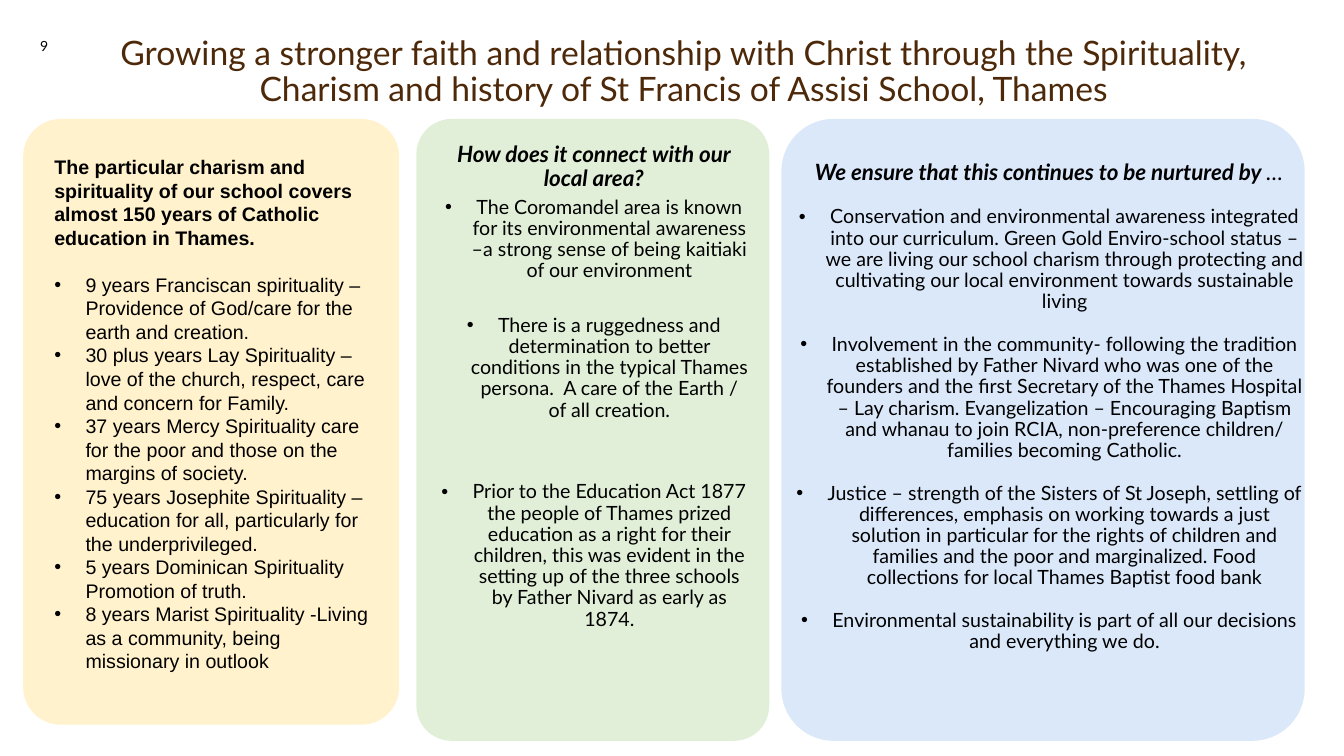
from lxml.etree import SubElement
from pptx import Presentation
from pptx.dml.color import RGBColor
from pptx.enum.shapes import MSO_SHAPE
from pptx.enum.text import MSO_ANCHOR, PP_ALIGN
from pptx.oxml.ns import qn
from pptx.util import Inches, Pt

COLORS = {
    "ink": "000000",
    "title": "4D290A",
    "charism": "FFF2CC",
    "local": "E1EFD8",
    "nurture": "DAE8FA",
}
CARD_TOP = 1.18
HEADING = {"bold": True, "italic": True, "size": Pt(16)}

CHARISM = [
    "9 years Franciscan spirituality – Providence of God/care for the earth and creation.",
    "30 plus years Lay Spirituality – love of the church, respect, care and concern for Family.",
    "37 years Mercy Spirituality care for the poor and those on the margins of society.",
    "75 years Josephite Spirituality –education for all, particularly for the underprivileged.",
    "5 years Dominican Spirituality Promotion of truth.",
    "8 years Marist Spirituality -Living as a community, being missionary in outlook",
]
LOCAL = [
    (4.2, "The Coromandel area is known for its environmental awareness –a strong sense of "
          "being kaitiaki of our environment"),
    (23.8, "There is a ruggedness and determination to better conditions in the typical Thames "
           "persona.  A care of the Earth / of all creation."),
    (43.4, "Prior to the Education Act 1877 the people of Thames prized education as a right for "
           "their children, this was evident in the setting up of the three schools by Father "
           "Nivard as early as 1874."),
]
NURTURE = [
    "Conservation and environmental awareness integrated into our curriculum. Green Gold "
    "Enviro-school status – we are living our school charism through protecting and cultivating "
    "our local environment towards sustainable living",
    "Involvement in the community- following the tradition established by Father Nivard who was "
    "one of the founders and the first Secretary of the Thames Hospital – Lay charism. "
    "Evangelization – Encouraging Baptism and whanau to join RCIA, non-preference children/ "
    "families becoming Catholic.",
    "Justice – strength of the Sisters of St Joseph, settling of differences, emphasis on working "
    "towards a just solution in particular for the rights of children and families and the poor "
    "and marginalized. Food collections for local Thames Baptist food bank",
    "Environmental sustainability is part of all our decisions and everything we do.",
]


class SlideBuilder:
    def __init__(self, slide, font="Lato", size=14):
        self.slide = slide
        self.font = font
        self.size = Pt(size)

    def card(self, left, width, height, color):
        sp = self.slide.shapes.add_shape(
            MSO_SHAPE.ROUNDED_RECTANGLE,
            Inches(left), Inches(CARD_TOP), Inches(width), Inches(height))
        sp.adjustments[0] = 0.1
        sp.shadow.inherit = False
        sp.fill.solid()
        sp.fill.fore_color.rgb = RGBColor.from_string(COLORS[color])
        sp.line.fill.background()

    def box(self, left, top, width, height, inset=(0.1, 0.05), anchor=MSO_ANCHOR.TOP):
        sp = self.slide.shapes.add_textbox(
            Inches(left), Inches(top), Inches(width), Inches(height))
        tf = sp.text_frame
        side, edge = Inches(inset[0]), Inches(inset[1])
        frame = {"word_wrap": True, "vertical_anchor": anchor, "margin_left": side,
                 "margin_right": side, "margin_top": edge, "margin_bottom": edge}
        for name, value in frame.items():
            setattr(tf, name, value)
        return tf

    def paragraph(self, tf, text, layout, bullet=False, before=0, **style):
        p = tf.paragraphs[0]
        if p.runs:
            p = tf.add_paragraph()
        if bullet:
            self.bullet(p)
        for name, value in layout.items():
            setattr(p, name, value)
        if before:
            p.space_before = Pt(before)
        self.run(p, text, **style)
        return p

    def run(self, p, text, color="ink", **style):
        r = p.add_run()
        r.text = text
        for name, value in ({"name": self.font, "size": self.size} | style).items():
            setattr(r.font, name, value)
        r.font.color.rgb = RGBColor.from_string(COLORS[color])

    def bullet(self, p):
        pPr = p._p.get_or_add_pPr()
        pPr.set("marL", str(Inches(0.31)))
        pPr.set("indent", str(-Inches(0.31)))
        clr = SubElement(pPr, qn("a:buClr"))
        SubElement(clr, qn("a:srgbClr"), val=COLORS["ink"])
        SubElement(pPr, qn("a:buFont"), typeface="Arial")
        SubElement(pPr, qn("a:buChar"), char="•")


def main():
    prs = Presentation()
    prs.slide_width, prs.slide_height = Inches(13.33), Inches(7.5)
    s = SlideBuilder(prs.slides.add_slide(prs.slide_layouts[6]))
    centered = {"alignment": PP_ALIGN.CENTER, "line_spacing": 0.9}
    left = {"alignment": PP_ALIGN.LEFT, "line_spacing": Pt(16.8)}

    tf = s.box(0.72, 0.3, 12.12, 0.83, anchor=MSO_ANCHOR.BOTTOM)
    s.paragraph(tf, "Growing a stronger faith and relationship with Christ through the "
                    "Spirituality, Charism and history of St Francis of Assisi School, Thames",
                centered, color="title", size=Pt(24))
    tf = s.box(0.3, 0.33, 0.83, 0.25, anchor=MSO_ANCHOR.MIDDLE)
    s.paragraph(tf, "9", {"alignment": PP_ALIGN.LEFT}, size=Pt(10))

    s.card(4.13, 3.5, 6.17, "local")
    tf = s.box(4.3, 1.37, 3.18, 4.9, inset=(0.05, 0.05))
    s.paragraph(tf, "How does it connect with our local area?", centered, **HEADING)
    for gap, text in LOCAL:
        s.paragraph(tf, text, centered, bullet=True, before=gap)

    s.card(7.75, 5.19, 6.17, "nurture")
    tf = s.box(7.8, 1.53, 5.21, 5.05, inset=(0.07, 0.07))
    p = s.paragraph(tf, "We ensure that this continues to be nurtured by ", centered, **HEADING)
    s.run(p, "…", italic=True, size=Pt(16))
    for text in NURTURE:
        s.paragraph(tf, text, centered, bullet=True, before=15.4)

    s.card(0.23, 3.73, 6.01, "charism")
    s.font = "Arial"
    tf = s.box(0.44, 1.49, 3.41, 5.3)
    s.paragraph(tf, "The particular charism and spirituality of our school covers almost "
                    "150 years of Catholic education in Thames.", left, bold=True)
    for i, text in enumerate(CHARISM):
        s.paragraph(tf, text, left, bullet=True, before=0 if i else 16.8)

    prs.save("out.pptx")


if __name__ == "__main__":
    main()
